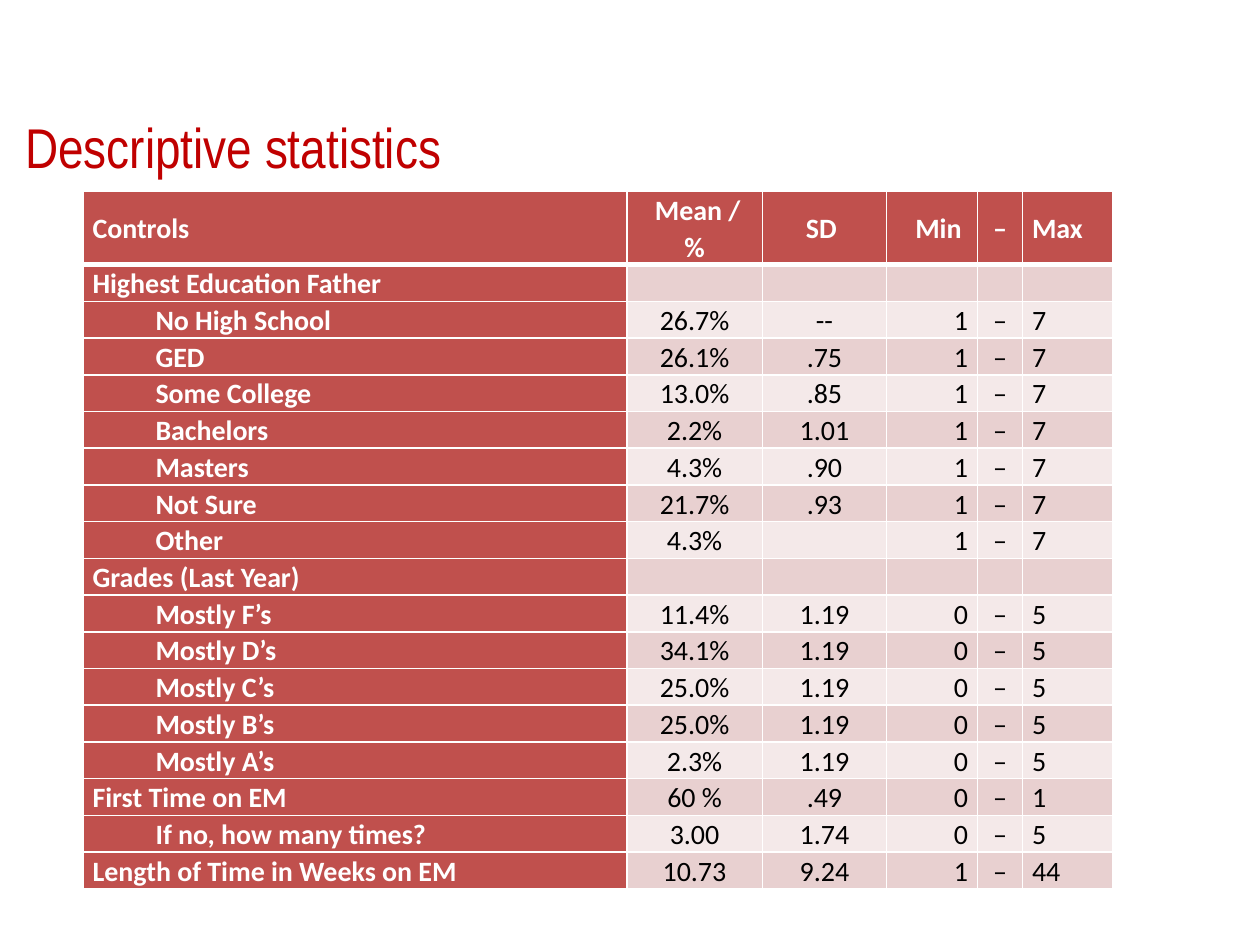
from lxml.etree import SubElement
from pptx import Presentation
from pptx.dml.color import RGBColor
from pptx.enum.text import MSO_ANCHOR, PP_ALIGN
from pptx.oxml.ns import qn
from pptx.util import Pt

COLORS = {
    "title": "C00000",
    "accent": "C0504D",
    "dark_band": "E8D0D0",
    "light_band": "F4E9E9",
    "white": "FFFFFF",
    "black": "000000",
}
COLUMN_WIDTHS = [310.7, 77.4, 71.1, 51.8, 25.9, 51.5]
ALIGNMENTS = [PP_ALIGN.LEFT, PP_ALIGN.CENTER, PP_ALIGN.CENTER,
              PP_ALIGN.RIGHT, PP_ALIGN.CENTER, PP_ALIGN.LEFT]
HEADER = ["Controls", " Mean / %", "SD ", "Min ", "–", "Max"]

# Label, indent level, mean or percent, SD, min, max
STATISTICS = [
    ("Highest Education Father", 0, "", "", "", ""),
    ("No High School", 1, "26.7%", "--", "1", "7"),
    ("GED", 1, "26.1%", ".75", "1", "7"),
    ("Some College", 1, "13.0%", ".85", "1", "7"),
    ("Bachelors", 1, "2.2%", "1.01", "1", "7"),
    ("Masters", 1, "4.3%", ".90", "1", "7"),
    ("Not Sure", 1, "21.7%", ".93", "1", "7"),
    ("Other", 1, "4.3%", "", "1", "7"),
    ("Grades (Last Year)", 0, "", "", "", ""),
    ("Mostly F’s", 1, "11.4%", "1.19", "0", "5"),
    ("Mostly D’s", 1, "34.1%", "1.19", "0", "5"),
    ("Mostly C’s", 1, "25.0%", "1.19", "0", "5"),
    ("Mostly B’s", 1, "25.0%", "1.19", "0", "5"),
    ("Mostly A’s", 1, "2.3%", "1.19", "0", "5"),
    ("First Time on EM", 0, "60 %", ".49", "0", "1"),
    ("If no, how many times?", 1, "3.00", "1.74", "0", "5"),
    ("Length of Time in Weeks on EM", 0, "10.73", "9.24", "1", "44"),
]


class SlideBuilder:
    title_font = "Arial Narrow"
    table_font = "Calibri"
    table_size = 16

    def __init__(self, slide):
        self.slide = slide

    def color(self, name):
        return RGBColor.from_string(COLORS[name])

    def title(self, text, left, top, width, height):
        box = self.slide.shapes.title
        box.left, box.top, box.width, box.height = map(Pt, (left, top, width, height))
        frame = box.text_frame
        frame.text = text
        frame.vertical_anchor = MSO_ANCHOR.MIDDLE
        para = frame.paragraphs[0]
        para.alignment = PP_ALIGN.LEFT
        para._p.get_or_add_pPr().set("marL", str(Pt(7.2)))
        font = para.runs[0].font
        font.name, font.size = self.title_font, Pt(32)
        font.color.rgb = self.color("title")

    def borders(self, cell, top, bottom):
        properties = cell._tc.get_or_add_tcPr()
        for side, width in (("L", 1), ("R", 1), ("T", top), ("B", bottom)):
            line = SubElement(properties, qn(f"a:ln{side}"), w=str(Pt(width)))
            fill = SubElement(line, qn("a:solidFill"))
            SubElement(fill, qn("a:srgbClr"), val=COLORS["white"])

    def cell(self, cell, text, alignment, fill, strong, level=0):
        cell.margin_left = cell.margin_right = Pt(5.4)
        cell.margin_top = cell.margin_bottom = 0
        cell.vertical_anchor = MSO_ANCHOR.MIDDLE
        cell.fill.solid()
        cell.fill.fore_color.rgb = self.color(fill)
        para = cell.text_frame.paragraphs[0]
        para.text = text
        para.alignment, para.line_spacing = alignment, 1.07
        if level:
            para.level = level
            para._p.get_or_add_pPr().set("marL", str(Pt(36)))
        for span in para.runs:
            font = span.font
            font.name, font.size, font.bold = self.table_font, Pt(self.table_size), strong
            font.color.rgb = self.color("white" if strong else "black")
        if not text:
            # Keeps an empty cell from growing its row
            SubElement(para._p, qn("a:endParaRPr"), sz=str(self.table_size * 100))

    def table(self, left, top, header, records, header_height, row_height):
        shape = self.slide.shapes.add_table(
            len(records) + 1, len(header), Pt(left), Pt(top),
            Pt(sum(COLUMN_WIDTHS)), Pt(header_height + row_height * len(records)))
        table = shape.table
        for column, width in zip(table.columns, COLUMN_WIDTHS):
            column.width = Pt(width)

        # Header row
        table.rows[0].height = Pt(header_height)
        for index, text in enumerate(header):
            cell = table.cell(0, index)
            self.borders(cell, 1, 3)
            self.cell(cell, text, ALIGNMENTS[index], "accent", True)

        # Body rows in alternating bands
        for number, (label, level, mean, deviation, low, high) in enumerate(records, 1):
            table.rows[number].height = Pt(row_height)
            band = "dark_band" if number % 2 else "light_band"
            values = [label, mean, deviation, low, "–" if low else "", high]
            for index, text in enumerate(values):
                first = index == 0
                cell = table.cell(number, index)
                self.borders(cell, 3 if number == 1 else 1, 1)
                self.cell(cell, text, ALIGNMENTS[index], "accent" if first else band,
                          first, level if first else 0)


def main():
    deck = Presentation()
    deck.slide_width, deck.slide_height = Pt(720), Pt(540)
    builder = SlideBuilder(deck.slides.add_slide(deck.slide_layouts[5]))
    builder.title("Descriptive statistics", 0, 49.7, 559.4, 67.7)
    builder.table(47.5, 109.4, HEADER, STATISTICS, 41.8, 21)
    deck.save("out.pptx")


if __name__ == "__main__":
    main()
